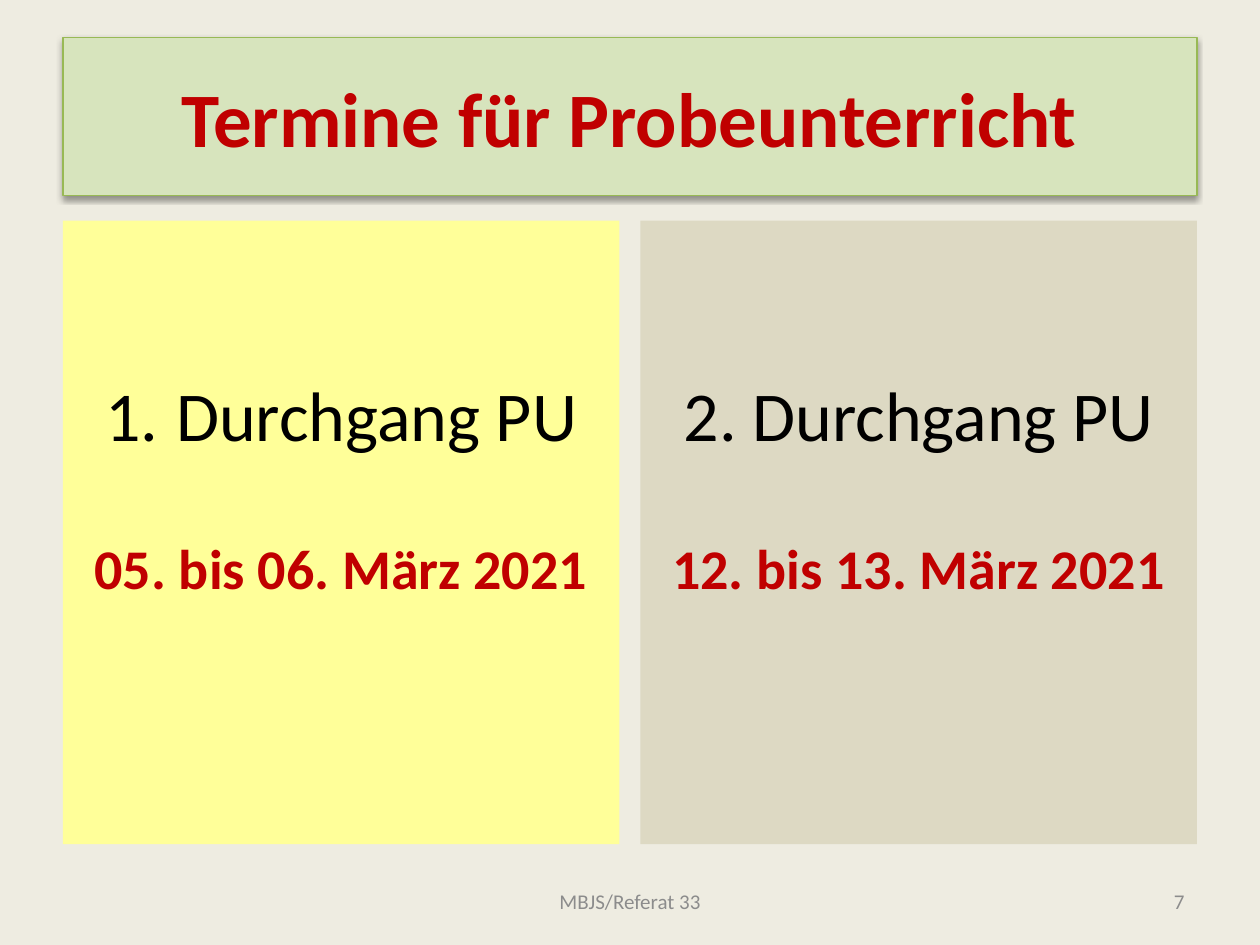
import pptx
import pptx.util
import pptx.dml.color
import pptx.enum.shapes
import pptx.enum.text
import pptx.oxml
import pptx.oxml.ns

Pt = pptx.util.Pt
RGBColor = pptx.dml.color.RGBColor
ALIGN = pptx.enum.text.PP_ALIGN
ANCHOR = pptx.enum.text.MSO_ANCHOR

BACKGROUND = RGBColor(0xEE, 0xEC, 0xE1)
GREEN = RGBColor(0xD7, 0xE4, 0xBD)
GREEN_LINE = RGBColor(0x98, 0xB9, 0x55)
YELLOW = RGBColor(0xFF, 0xFF, 0x99)
BEIGE = RGBColor(0xDD, 0xD9, 0xC3)
RED = RGBColor(0xC0, 0x00, 0x00)
BLACK = RGBColor(0x00, 0x00, 0x00)
GREY = RGBColor(0x8C, 0x8C, 0x8C)

FONT = "Calibri"
MARGIN = 36
CONTENT_WIDTH = 648
PANEL_WIDTH = 318


def add_text(paragraph, text, size=12, color=GREY, bold=False,
             align=ALIGN.CENTER, before=0):
    paragraph.alignment = align
    paragraph.space_before = Pt(before)
    run = paragraph.add_run()
    run.text = text
    run.font.name = FONT
    run.font.size = Pt(size)
    run.font.bold = bold
    run.font.color.rgb = color


def add_number(paragraph, indent):
    """Turn the paragraph into an automatically numbered item."""
    properties = paragraph._p.get_or_add_pPr()
    properties.set("marL", str(Pt(indent)))
    properties.set("indent", str(-Pt(indent)))
    properties.append(pptx.oxml.parse_xml(
        f'<a:buAutoNum {pptx.oxml.ns.nsdecls("a")} type="arabicPeriod"/>'))


def add_box(slide, left, top, width, height, fill):
    shape = slide.shapes.add_shape(
        pptx.enum.shapes.MSO_SHAPE.RECTANGLE,
        Pt(left), Pt(top), Pt(width), Pt(height))
    shape.shadow.inherit = False
    shape.fill.solid()
    shape.fill.fore_color.rgb = fill
    shape.line.fill.background()
    shape.text_frame.word_wrap = True
    return shape


def add_shadow(shape):
    effects = shape._element.spPr.find(pptx.oxml.ns.qn("a:effectLst"))
    effects.append(pptx.oxml.parse_xml(
        f'<a:outerShdw {pptx.oxml.ns.nsdecls("a")} blurRad="{Pt(3.1)}" '
        f'dist="{Pt(1.6)}" dir="5400000" rotWithShape="0">'
        '<a:srgbClr val="000000"><a:alpha val="38000"/></a:srgbClr>'
        '</a:outerShdw>'))


def add_title(slide, text):
    shape = add_box(slide, MARGIN, 21.6, CONTENT_WIDTH, 90, GREEN)
    shape.line.color.rgb = GREEN_LINE
    shape.line.width = Pt(0.75)
    add_shadow(shape)
    shape.text_frame.vertical_anchor = ANCHOR.MIDDLE
    add_text(shape.text_frame.paragraphs[0], text, size=44, color=RED, bold=True)


def add_panel(slide, left, fill, heading, dates, numbered=False):
    frame = add_box(slide, left, 126, PANEL_WIDTH, 356.4, fill).text_frame
    frame.vertical_anchor = ANCHOR.TOP
    frame.margin_top = Pt(86)
    add_text(frame.paragraphs[0], heading, size=40, color=BLACK)
    if numbered:
        add_number(frame.paragraphs[0], 40.5)
    add_text(frame.add_paragraph(), dates, size=32, color=RED, bold=True, before=45)


def add_footer(slide, left, width, text, align):
    box = slide.shapes.add_textbox(Pt(left), Pt(500.5), Pt(width), Pt(28.75))
    box.text_frame.word_wrap = True
    box.text_frame.vertical_anchor = ANCHOR.MIDDLE
    add_text(box.text_frame.paragraphs[0], text, align=align)


def main():
    presentation = pptx.Presentation()
    presentation.slide_width = Pt(720)
    presentation.slide_height = Pt(540)
    slide = presentation.slides.add_slide(presentation.slide_layouts[6])
    slide.background.fill.solid()
    slide.background.fill.fore_color.rgb = BACKGROUND

    # Title
    add_title(slide, "Termine für Probeunterricht")

    # One panel for each round
    add_panel(slide, MARGIN, YELLOW, "Durchgang PU",
              "05. bis 06. März 2021", numbered=True)
    add_panel(slide, MARGIN + CONTENT_WIDTH - PANEL_WIDTH, BEIGE,
              "2. Durchgang PU", "12. bis 13. März 2021")

    # Footer and slide number
    add_footer(slide, 246, 228, "MBJS/Referat 33", ALIGN.CENTER)
    add_footer(slide, 516, 168, "7", ALIGN.RIGHT)

    presentation.save("out.pptx")


if __name__ == "__main__":
    main()
